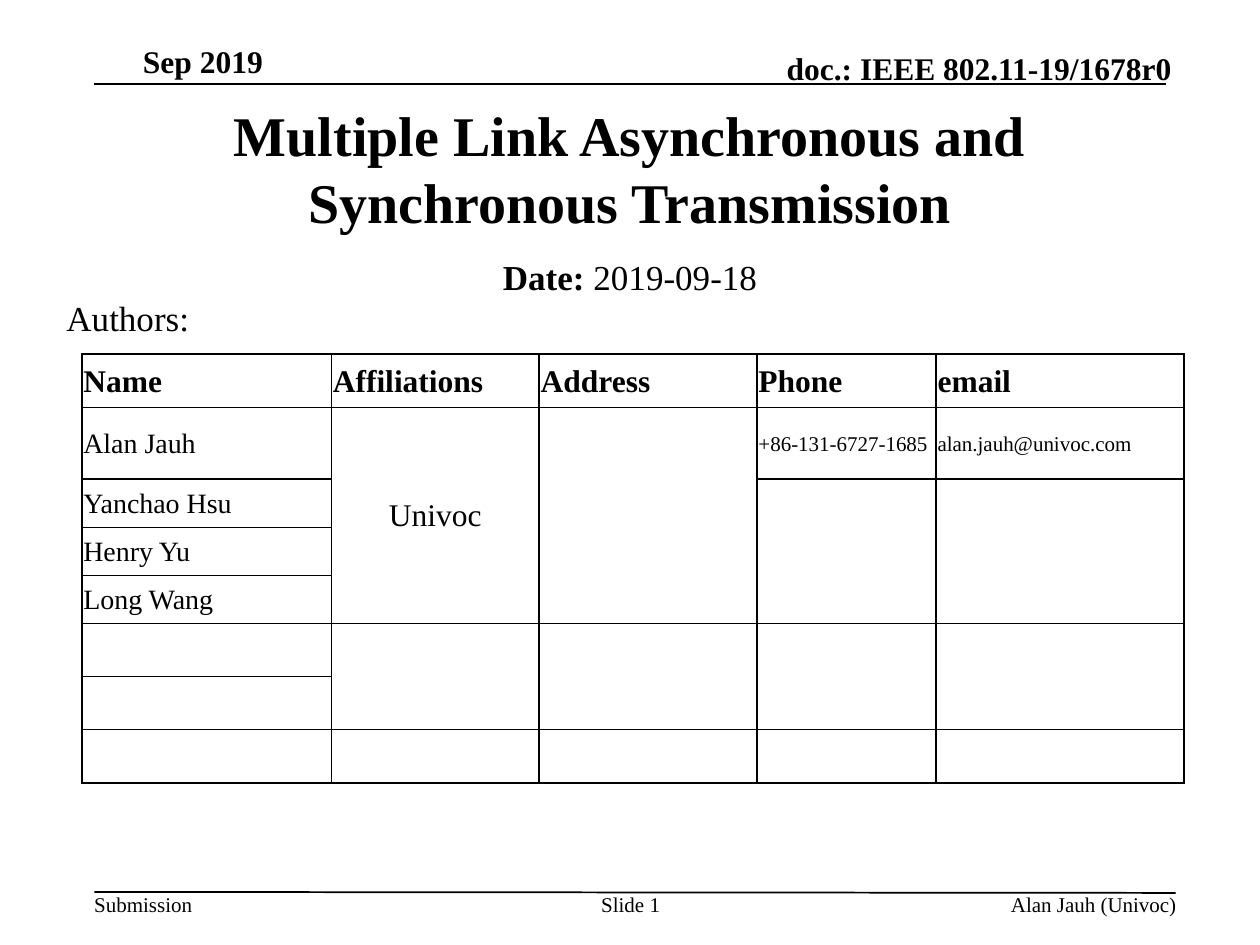
from lxml import etree
from pptx import Presentation
from pptx.dml.color import RGBColor
from pptx.enum.shapes import MSO_CONNECTOR
from pptx.enum.text import MSO_ANCHOR, MSO_AUTO_SIZE, PP_ALIGN
from pptx.oxml.ns import qn
from pptx.util import Cm, Pt

LEFT, MID, RIGHT = PP_ALIGN.LEFT, PP_ALIGN.CENTER, PP_ALIGN.RIGHT
TOP, CENTER, BOTTOM = MSO_ANCHOR.TOP, MSO_ANCHOR.MIDDLE, MSO_ANCHOR.BOTTOM
NONE = MSO_AUTO_SIZE.NONE
STRAIGHT = MSO_CONNECTOR.STRAIGHT

COLORS = {"ink": "000000"}
SIDES = ("margin_left", "margin_top", "margin_right", "margin_bottom")
FLAT = (0, 0, 0, 0)
INSET = (0.25, 0.13, 0.25, 0.13)
SNUG = (0.03, 0.03, 0.03, 0)


def assign(item, values):
    for name, value in values.items():
        setattr(item, name, value)


class Page:
    font = "Times New Roman"
    ink = RGBColor.from_string(COLORS["ink"])

    def __init__(self, deck):
        self.slide = deck.slides.add_slide(deck.slide_layouts[1])
        self.shapes = self.slide.shapes

    def letter(self, para, runs, size, align):
        assign(para, {"alignment": align, "space_before": Pt(0)})
        look = {"name": self.font, "size": Pt(size)}
        assign(para.font, look)
        for text, bold in runs:
            run = para.add_run()
            run.text = text
            assign(run.font, {**look, "bold": bold})
            run.font.color.rgb = self.ink

    def fill(self, shape, box, runs, size, align=LEFT, anchor=TOP, inset=FLAT, wrap=True):
        assign(shape, dict(zip(("left", "top", "width", "height"), map(Cm, box))))
        frame = shape.text_frame
        assign(frame, {"word_wrap": wrap, "auto_size": NONE, "vertical_anchor": anchor})
        assign(frame, dict(zip(SIDES, map(Cm, inset))))
        self.letter(frame.paragraphs[0], runs, size, align)

    def title(self, box, text, size):
        self.fill(self.shapes.title, box, [(text, True)], size, MID, CENTER, INSET)

    def body(self, box, runs, size):
        shape = self.slide.placeholders[1]
        props = shape.text_frame.paragraphs[0]._p.get_or_add_pPr()
        props.set("marL", "0")
        props.set("indent", "0")
        etree.SubElement(props, qn("a:buNone"))
        self.fill(shape, box, runs, size, MID, TOP, INSET)

    def text(self, box, text, size, bold=False, **form):
        shape = self.shapes.add_textbox(*map(Cm, box))
        self.fill(shape, box, [(text, bold)], size, **form)

    def line(self, *ends):
        line = self.shapes.add_connector(STRAIGHT, *map(Cm, ends))
        line.line.color.rgb = self.ink
        line.line.width = Pt(1)
        etree.SubElement(line._element.spPr, qn("a:effectLst"))

    def border(self, cell):
        props = cell._tc.get_or_add_tcPr()
        for side in ("lnL", "lnR", "lnT", "lnB"):
            edge = etree.SubElement(props, qn(f"a:{side}"), w=str(Pt(1)))
            paint = etree.SubElement(edge, qn("a:solidFill"))
            etree.SubElement(paint, qn("a:srgbClr"), val=COLORS["ink"])

    def table(self, left, top, cols, rows, data, spans):
        box = map(Cm, (left, top, sum(cols), sum(rows)))
        grid = self.shapes.add_table(len(rows), len(cols), *box).table
        assign(grid, {"first_row": False, "horz_banding": False})
        for col, width in zip(grid.columns, cols):
            col.width = Cm(width)
        for row, height in zip(grid.rows, rows):
            row.height = Cm(height)
        for r in range(len(rows)):
            for c in range(len(cols)):
                cell = grid.cell(r, c)
                self.border(cell)
                cell.fill.background()
                cell.vertical_anchor = CENTER
                assign(cell, dict(zip(SIDES, map(Cm, SNUG))))
                text, size, align = data.get((r, c), ("", 16, LEFT))
                runs = [(text, r == 0)] if text else []
                self.letter(cell.text_frame.paragraphs[0], runs, size, align)
        for first, last, cells in spans:
            for c in cells:
                grid.cell(first, c).merge(grid.cell(last, c))


def main():
    deck = Presentation()
    assign(deck, {"slide_width": Cm(25.4), "slide_height": Cm(19.05)})
    page = Page(deck)

    page.line(1.9, 1.7, 23.5, 1.7)
    page.line(1.9, 17.98, 23.7, 18)
    page.text((13.89, 0.99, 9.73, 0.76), "doc.: IEEE 802.11-19/1678r0", 18, True,
              align=RIGHT, anchor=BOTTOM)
    page.text((1.9, 0.74, 3.4, 0.97), "Sep 2019", 18, True, align=RIGHT, anchor=CENTER)

    foot = 17.98
    page.text((1.9, foot, 1.98, 0.51), "Submission", 12, wrap=False)
    page.text((11.61, foot, 2.21, 1.02), "Slide 1", 12, align=MID)
    page.text((14.88, foot, 8.84, 0.51), "Alan Jauh (Univoc)", 12, align=RIGHT)

    page.title((1.9, 1.9, 21.6, 2.95),
               "Multiple Link Asynchronous and Synchronous Transmission", 32)
    page.body((1.9, 5.03, 21.6, 1.09), [("Date:", True), (" 2019-09-18", False)], 20)
    page.text((1.09, 5.84, 4.01, 1.07), "Authors:", 20, inset=INSET)

    heads = ("Name", "Affiliations", "Address", "Phone", "email")
    names = ("Alan Jauh", "Yanchao Hsu", "Henry Yu", "Long Wang")
    data = {(0, c): (head, 18, LEFT) for c, head in enumerate(heads)}
    data.update({(r, 0): (name, 16, LEFT) for r, name in enumerate(names, 1)})
    data[1, 1] = ("Univoc", 18, MID)
    data[1, 3] = ("+86-131-6727-1685", 12, LEFT)
    data[1, 4] = ("alan.jauh@univoc.com", 12, LEFT)
    page.table(1.65, 7.14, (5.03, 4.19, 4.39, 3.61, 5),
               (1.07, 1.45, 0.97, 0.97, 0.97, 1.07, 1.07, 1.07), data,
               [(1, 4, (1, 2)), (2, 4, (3, 4)), (5, 6, (1, 2, 3, 4))])

    deck.save("out.pptx")


if __name__ == "__main__":
    main()
